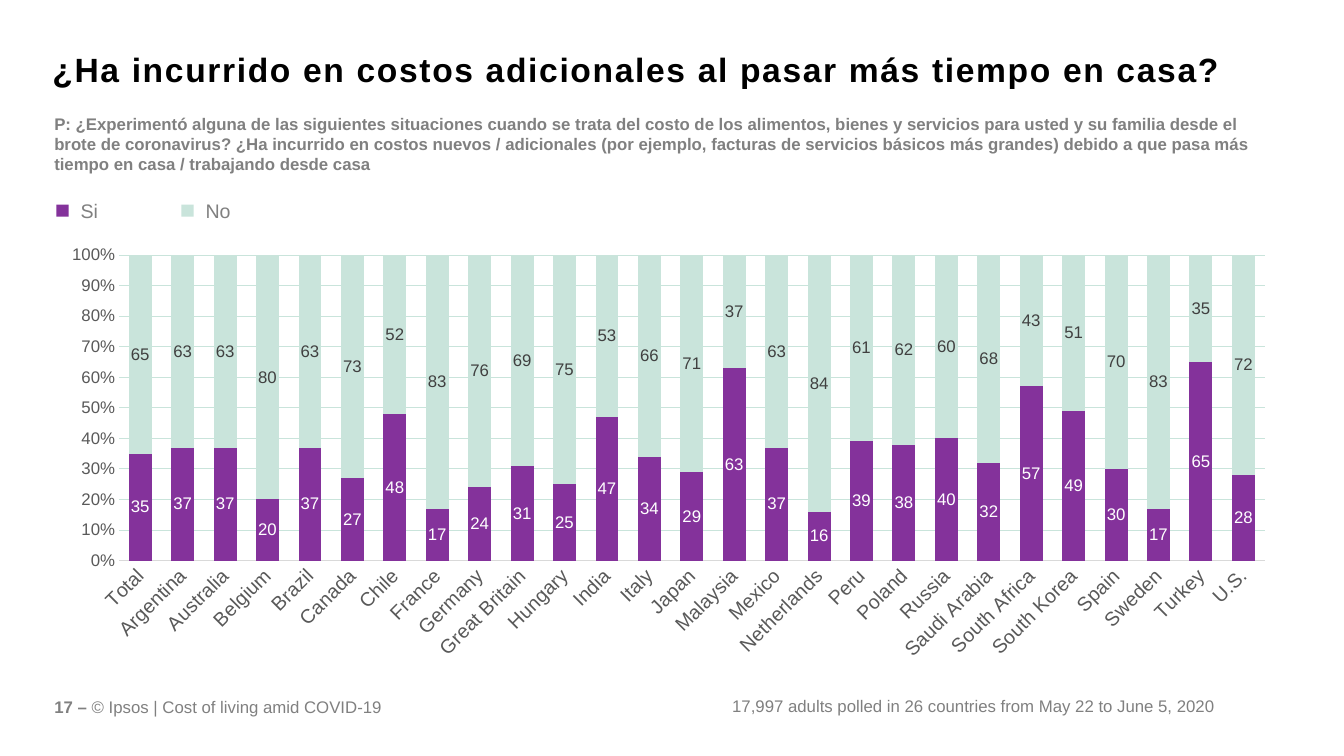
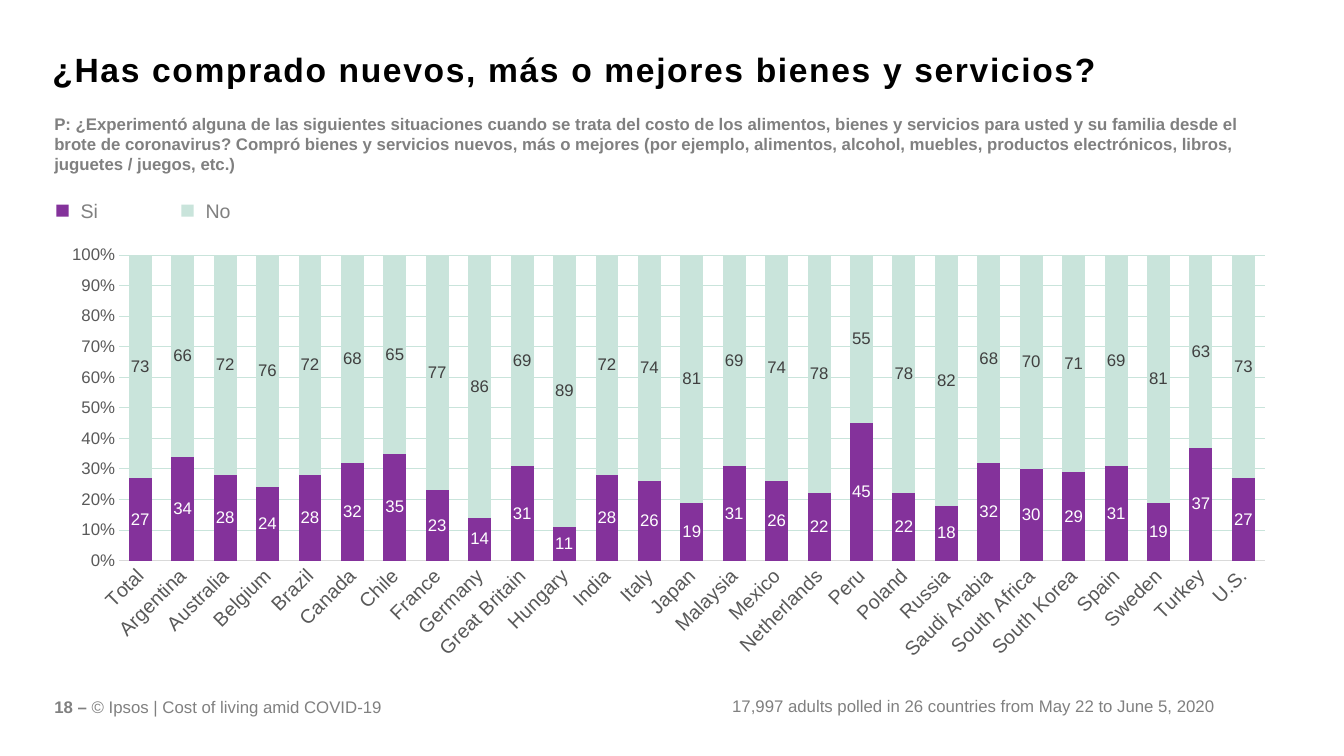
from dataclasses import dataclass

from lxml.etree import SubElement
from pptx import Presentation
from pptx.chart.axis import CategoryAxis, ValueAxis
from pptx.chart.chart import Chart
from pptx.chart.data import CategoryChartData
from pptx.dml.color import RGBColor
from pptx.enum.chart import XL_CHART_TYPE, XL_LABEL_POSITION, XL_TICK_MARK
from pptx.enum.shapes import MSO_SHAPE
from pptx.enum.text import MSO_ANCHOR, MSO_AUTO_SIZE, PP_ALIGN
from pptx.oxml.ns import qn
from pptx.slide import Slide
from pptx.text.text import Font
from pptx.util import Inches, Pt

FACE = "Arial"
LEFT = 0.44
WIDE = 12.35
HUES = {
    "yes": "84329B",
    "no": "C9E4DB",
    "title": "000000",
    "gray": "808080",
    "axis": "595959",
    "base": "D9D9D9",
    "light": "FFFFFF",
    "dark": "404040",
}
LANDS = [
    "Total", "Argentina", "Australia", "Belgium", "Brazil", "Canada", "Chile",
    "France", "Germany", "Great Britain", "Hungary", "India", "Italy", "Japan",
    "Malaysia", "Mexico", "Netherlands", "Peru", "Poland", "Russia",
    "Saudi Arabia", "South Africa", "South Korea", "Spain", "Sweden", "Turkey",
    "U.S.",
]
LEAD = (
    "P: ¿Experimentó alguna de las siguientes situaciones cuando se trata del "
    "costo de los alimentos, bienes y servicios para usted y su familia desde "
    "el brote de coronavirus? "
)
SOURCE = "17,997 adults polled in 26 countries from May 22 to June 5, 2020"
RIGHTS = "© Ipsos | Cost of living amid COVID-19"


@dataclass(frozen=True)
class Box:
    left: float
    top: float
    width: float
    height: float

    def spans(self) -> tuple[int, int, int, int]:
        return (Inches(self.left), Inches(self.top),
                Inches(self.width), Inches(self.height))


@dataclass(frozen=True)
class Group:
    name: str
    hue: str
    label: str


@dataclass(frozen=True)
class Page:
    number: int
    title: str
    query: str
    yes: list[int]


@dataclass(frozen=True)
class Part:
    text: str
    bold: bool = False


GROUPS = [Group("Si", "yes", "light"), Group("No", "no", "dark")]
PAGES = [
    Page(
        17,
        "¿Ha incurrido en costos adicionales al pasar más tiempo en casa?",
        "¿Ha incurrido en costos nuevos / adicionales (por ejemplo, facturas de "
        "servicios básicos más grandes) debido a que pasa más tiempo en casa / "
        "trabajando desde casa",
        [35, 37, 37, 20, 37, 27, 48, 17, 24, 31, 25, 47, 34, 29, 63, 37, 16,
         39, 38, 40, 32, 57, 49, 30, 17, 65, 28],
    ),
    Page(
        18,
        "¿Has comprado nuevos, más o mejores bienes y servicios?",
        "Compró bienes y servicios nuevos, más o mejores (por ejemplo, "
        "alimentos, alcohol, muebles, productos electrónicos, libros, juguetes "
        "/ juegos, etc.)",
        [27, 34, 28, 24, 28, 32, 35, 23, 14, 31, 11, 28, 26, 19, 31, 26, 22,
         45, 22, 18, 32, 30, 29, 31, 19, 37, 27],
    ),
]


def tint(key: str) -> RGBColor:
    return RGBColor.from_string(HUES[key])


def style(font: Font, size: int, hue: str) -> None:
    font.name = FACE
    font.size = Pt(size)
    font.color.rgb = tint(hue)


def add_title(slide: Slide, text: str) -> None:
    title = slide.shapes.title
    title.left, title.top, title.width, title.height = Box(LEFT, 0.4, WIDE, 0.51).spans()
    frame = title.text_frame
    frame.text = text
    frame.word_wrap = True
    frame.auto_size = MSO_AUTO_SIZE.NONE
    frame.vertical_anchor = MSO_ANCHOR.TOP
    frame.margin_left = frame.margin_right = Inches(0.08)
    frame.margin_top = frame.margin_bottom = Inches(0.05)
    line = frame.paragraphs[0]
    line.alignment = PP_ALIGN.LEFT
    line.line_spacing = 1.1
    line.space_after = Pt(6)
    style(line.font, 24, "title")
    line.font.bold = True
    line.runs[0]._r.get_or_add_rPr().set("spc", "120")


def add_text(slide: Slide, box: Box, parts: list[Part], size: int = 12,
             align: PP_ALIGN = PP_ALIGN.LEFT) -> None:
    frame = slide.shapes.add_textbox(*box.spans()).text_frame
    frame.word_wrap = True
    line = frame.paragraphs[0]
    line.alignment = align
    style(line.font, size, "gray")
    if len(parts) == 1:
        line.font.bold = parts[0].bold
    for part in parts:
        run = line.add_run()
        run.text = part.text
        if len(parts) > 1:
            run.font.bold = part.bold


def add_legend(slide: Slide) -> None:
    for index, group in enumerate(GROUPS):
        left = 0.56 + 1.24 * index
        mark = slide.shapes.add_shape(MSO_SHAPE.RECTANGLE, *Box(left, 2.03, 0.12, 0.12).spans())
        mark.shadow.inherit = False
        mark.fill.solid()
        mark.fill.fore_color.rgb = tint(group.hue)
        mark.line.fill.background()
        add_text(slide, Box(left + 0.14, 1.92, 0.62, 0.34), [Part(group.name)], 14)


def style_axis(axis: CategoryAxis | ValueAxis, size: int) -> None:
    axis.major_tick_mark = XL_TICK_MARK.NONE
    axis.minor_tick_mark = XL_TICK_MARK.NONE
    style(axis.tick_labels.font, size, "axis")


def place_plot(chart: Chart) -> None:
    area = chart.element.xpath(".//c:plotArea")[0]
    for old in area.findall(qn("c:layout")):
        area.remove(old)
    layout = SubElement(area, qn("c:layout"))
    area.insert(0, layout)
    manual = SubElement(layout, qn("c:manualLayout"))
    rules = {"layoutTarget": "inner", "xMode": "edge", "yMode": "edge",
             "x": "0.06", "y": "0.04", "w": "0.92", "h": "0.71"}
    for name, value in rules.items():
        SubElement(manual, qn(f"c:{name}")).set("val", value)


def add_bars(slide: Slide, yes: list[int]) -> None:
    data = CategoryChartData(number_format="0")
    data.categories = LANDS
    for group, values in zip(GROUPS, (yes, [100 - value for value in yes])):
        data.add_series(group.name, values)
    chart = slide.shapes.add_chart(
        XL_CHART_TYPE.COLUMN_STACKED_100, *Box(LEFT, 2.36, WIDE, 4.27).spans(), data
    ).chart
    chart.has_legend = False
    chart.has_title = False
    style(chart.font, 10, "title")
    place_plot(chart)

    lands = chart.category_axis
    style_axis(lands, 14)
    lands.format.line.color.rgb = tint("base")
    lands.format.line.width = Pt(0.75)
    lands._element.find(qn("c:txPr")).find(qn("a:bodyPr")).set("rot", "-2700000")

    scale = chart.value_axis
    style_axis(scale, 12)
    scale.minimum_scale, scale.maximum_scale, scale.major_unit = 0, 1, 0.1
    scale.format.line.fill.background()
    scale.tick_labels.number_format = "0%"
    scale.tick_labels.number_format_is_linked = False
    grid = scale.major_gridlines.format.line
    grid.color.rgb = tint("no")
    grid.width = Pt(0.75)

    plot = chart.plots[0]
    plot.gap_width = 85
    plot.overlap = 100
    plot.vary_by_categories = False
    for group, bars in zip(GROUPS, plot.series):
        bars.format.fill.solid()
        bars.format.fill.fore_color.rgb = tint(group.hue)
        bars.invert_if_negative = False
        labels = bars.data_labels
        labels.show_value = True
        labels.position = XL_LABEL_POSITION.CENTER
        labels.number_format = "0"
        labels.number_format_is_linked = False
        style(labels.font, 12, group.label)


def add_page(deck: Presentation, page: Page) -> None:
    slide = deck.slides.add_slide(deck.slide_layouts[5])
    add_title(slide, page.title)
    add_bars(slide, page.yes)
    add_text(slide, Box(6.85, 6.85, 5.3, 0.3), [Part(SOURCE)], align=PP_ALIGN.RIGHT)
    add_text(slide, Box(LEFT, 1.08, 12.2, 0.71), [Part(LEAD + page.query, True)])
    add_legend(slide)
    add_text(slide, Box(LEFT, 6.86, 3.78, 0.25),
             [Part(f"{page.number} – ", True), Part(RIGHTS)])


def main() -> None:
    deck = Presentation()
    deck.slide_width = Inches(13.33)
    deck.slide_height = Inches(7.5)
    for page in PAGES:
        add_page(deck, page)
    deck.save("out.pptx")


if __name__ == "__main__":
    main()
